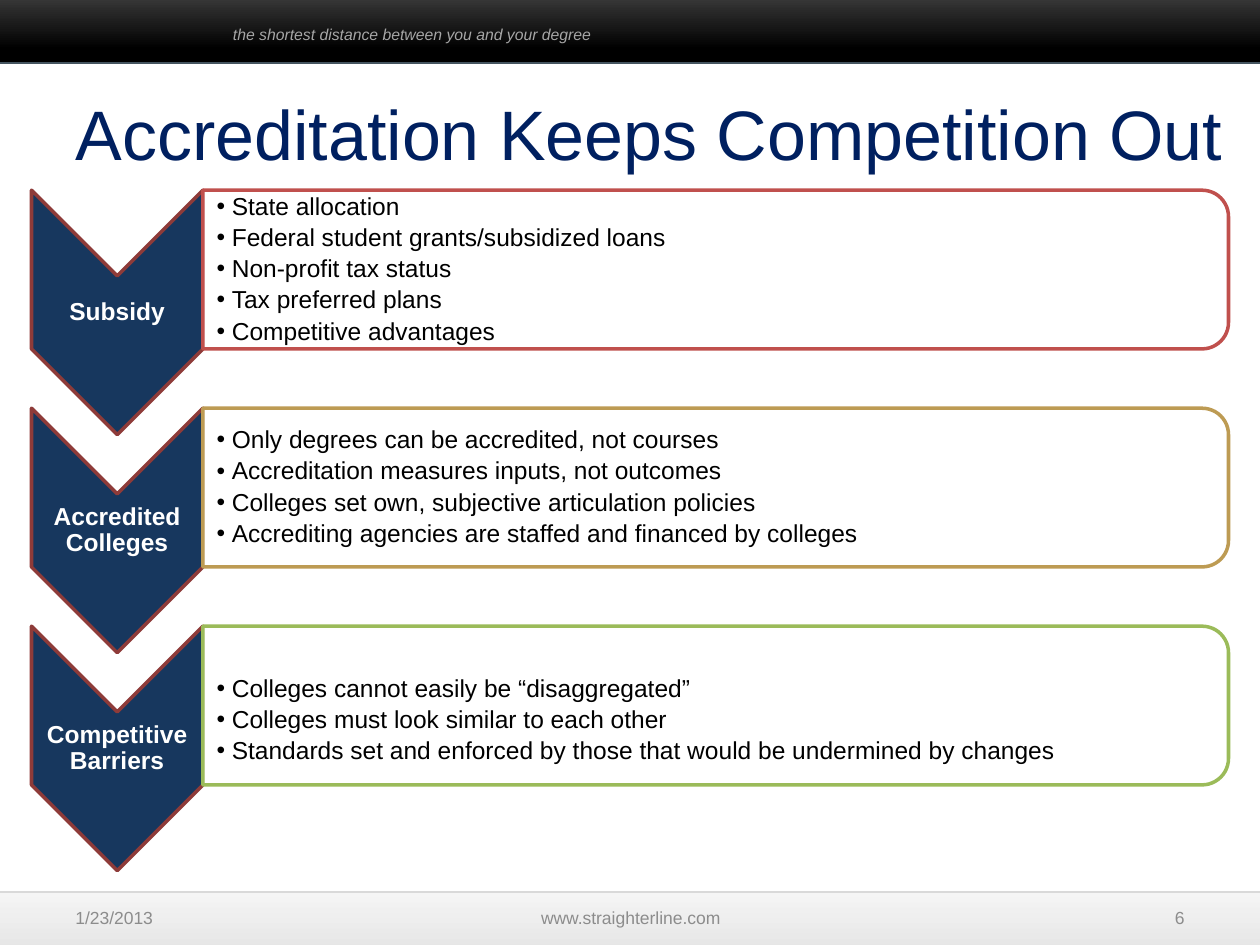
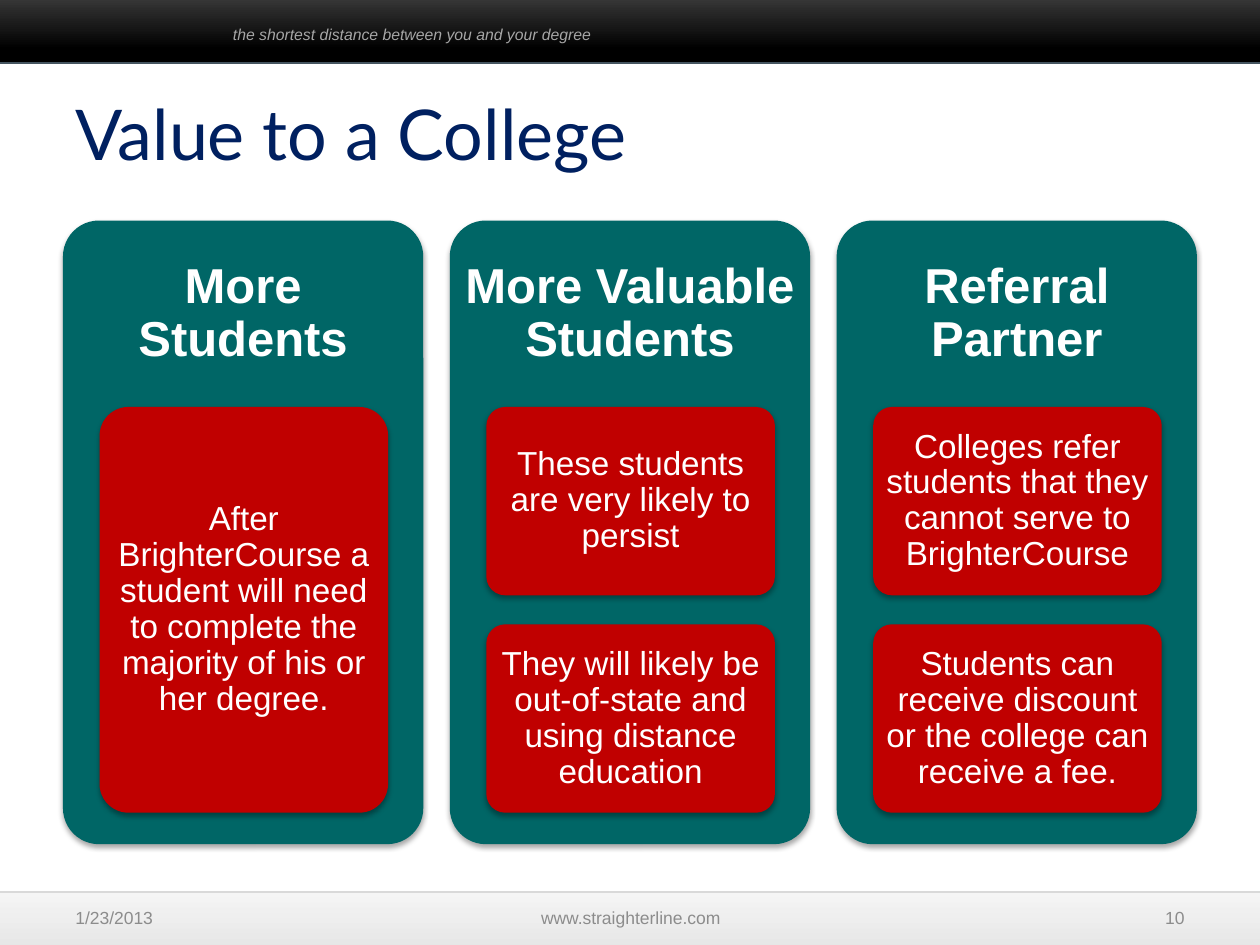
from dataclasses import dataclass
from typing import Any, NamedTuple

from lxml.etree import SubElement
from pptx import Presentation
from pptx.dml.color import RGBColor
from pptx.enum.shapes import MSO_SHAPE as Kind
from pptx.enum.text import MSO_ANCHOR as Anchor, MSO_AUTO_SIZE as Fit, PP_ALIGN as Align
from pptx.oxml.ns import qn
from pptx.util import Inches, Pt


@dataclass(frozen=True)
class Theme:
    font: str = "Arial"
    lato: str = "Lato"
    white: str = "FFFFFF"
    black: str = "000000"
    title: str = "002060"
    foot: str = "8C8C8C"
    motto: str = "A6A6A6"
    edge: str = "455560"
    rule: str = "D9D9D9"
    light: str = "F2F2F2"
    dark: str = "404040"
    navy: str = "17375E"
    rust: str = "8E3B39"
    red: str = "C0504D"
    gold: str = "BD9B53"
    green: str = "9BBB59"
    teal: str = "006666"
    tile: str = "C00000"
    big: float = 40
    head: float = 28
    body: float = 19
    list: float = 14
    small: float = 10
    tiny: float = 9


T = Theme()


class Area(NamedTuple):
    left: float
    top: float
    width: float
    height: float

    def turn(self) -> "Area":
        shift = (self.width - self.height) / 2
        return Area(self.left + shift, self.top - shift, self.height, self.width)


@dataclass(frozen=True)
class Style:
    size: float
    color: str
    font: str = T.font
    bold: bool = False
    italic: bool = False
    align: Align = Align.LEFT
    anchor: Anchor = Anchor.TOP
    inset: tuple = (0.1, 0.05, 0.1, 0.05)
    space: float = 1.0
    after: float = 0
    bullet: bool = False


class Row(NamedTuple):
    label: str
    color: str
    items: list
    push: float = 0.01


class Card(NamedTuple):
    label: str
    tiles: list


MID = {"align": Align.CENTER, "anchor": Anchor.MIDDLE, "space": 0.9}
LABEL = Style(T.list, T.white, bold=True, inset=(0.01,) * 4, **MID)
HEAD = Style(T.head, T.white, bold=True, inset=(0.12,) * 4, **MID)
TILE = Style(T.body, T.white, inset=(0.05, 0.04, 0.05, 0.04), **MID)
MOTTO = Style(T.tiny, T.motto, italic=True)

ROWS = [
    Row("Subsidy", T.red, [
        "State allocation",
        "Federal student grants/subsidized loans",
        "Non-profit tax status",
        "Tax preferred plans",
        "Competitive advantages",
    ]),
    Row("Accredited Colleges", T.gold, [
        "Only degrees can be accredited, not courses",
        "Accreditation measures inputs, not outcomes",
        "Colleges set own, subjective articulation policies",
        "Accrediting agencies are staffed and financed by colleges",
    ]),
    Row("Competitive Barriers", T.green, [
        "Colleges cannot easily be “disaggregated”",
        "Colleges must look similar to each other",
        "Standards set and enforced by those that would be undermined by changes",
    ], 0.25),
]

CARDS = [
    Card("More Students", [
        "After BrighterCourse a student will need to complete the majority of his or her degree.",
    ]),
    Card("More Valuable Students", [
        "These students are very likely to persist",
        "They will likely be out-of-state and using distance education",
    ]),
    Card("Referral Partner", [
        "Colleges refer students that they cannot serve to BrighterCourse",
        "Students can receive discount or the college can receive a fee.",
    ]),
]


def put(target: Any, values: dict) -> None:
    for name, value in values.items():
        setattr(target, name, value)


def tint(color: str) -> RGBColor:
    return RGBColor.from_string(color)


def place(shape: Any, area: Area) -> None:
    put(shape, {key: Inches(val) for key, val in area._asdict().items()})


def write(shape: Any, lines: list, style: Style) -> None:
    frame = shape.text_frame
    sides = ("margin_left", "margin_top", "margin_right", "margin_bottom")
    put(frame, {side: Inches(gap) for side, gap in zip(sides, style.inset)})
    put(frame, {"word_wrap": True, "auto_size": Fit.NONE, "vertical_anchor": style.anchor})
    for spot, line in enumerate(lines):
        para = frame.add_paragraph() if spot else frame.paragraphs[0]
        if style.bullet:
            props = para._p.get_or_add_pPr()
            put_in = Inches(0.12)
            props.set("marL", str(put_in))
            props.set("indent", str(-put_in))
            SubElement(props, qn("a:buFont")).set("typeface", T.font)
            SubElement(props, qn("a:buChar")).set("char", "•")
        put(para, {
            "alignment": style.align,
            "line_spacing": style.space,
            "space_before": Pt(0),
            "space_after": Pt(style.after),
        })
        run = para.add_run()
        run.text = line
        put(run.font, {
            "name": style.font,
            "size": Pt(style.size),
            "bold": style.bold,
            "italic": style.italic,
        })
        run.font.color.rgb = tint(style.color)


def note(slide: Any, area: Area, text: str, style: Style) -> None:
    box = slide.shapes.add_textbox(*map(Inches, area))
    write(box, [text], style)


def draw(slide: Any, kind: Kind, area: Area, stops: list, alpha: int = 100,
         line: str = "", width: float = 2, turned: bool = False) -> Any:
    shape = slide.shapes.add_shape(kind, *map(Inches, area.turn() if turned else area))
    shape.rotation = 90 if turned else 0
    shape.shadow.inherit = False
    fill = shape.fill
    if len(stops) == 1:
        fill.solid()
        fill.fore_color.rgb = tint(stops[0][1])
    else:
        fill.gradient()
        fill.gradient_angle = 270
        for stop, (spot, color) in zip(fill.gradient_stops, stops):
            stop.position = spot
            stop.color.rgb = tint(color)
    if alpha < 100:
        for color in shape.element.spPr.iter(qn("a:srgbClr")):
            SubElement(color, qn("a:alpha")).set("val", str(alpha * 1000))
    if line:
        shape.line.color.rgb = tint(line)
        shape.line.width = Pt(width)
    else:
        shape.line.fill.background()
    return shape


def block(slide: Any, area: Area, color: str) -> Any:
    shape = draw(slide, Kind.ROUNDED_RECTANGLE, area, [(0, color)])
    shape.adjustments[0] = 0.1
    glow = SubElement(shape.element.spPr.find(qn("a:effectLst")), qn("a:outerShdw"))
    form = {"blurRad": Pt(3.1), "dist": Pt(1.8), "dir": 5400000, "rotWithShape": 0}
    for key, val in form.items():
        glow.set(key, str(val))
    shade = SubElement(glow, qn("a:srgbClr"))
    shade.set("val", T.black)
    SubElement(shade, qn("a:alpha")).set("val", "35000")
    return shape


def start(deck: Any, layout: int, title: str, font: str, width: float, page: int) -> Any:
    slide = deck.slides.add_slide(deck.slide_layouts[layout])
    draw(slide, Kind.RECTANGLE, Area(-0.08, 7.08, 10.17, 0.5),
         [(0, T.light), (1, T.rule)], 70, T.rule, 1)
    feet = [
        (0.5, 2.33, "1/23/2013", Align.LEFT),
        (3.42, 3.17, "www.straighterline.com", Align.CENTER),
        (7.17, 2.33, str(page), Align.RIGHT),
    ]
    for left, span, text, align in feet:
        style = Style(T.small, T.foot, align=align, anchor=Anchor.MIDDLE)
        note(slide, Area(left, 7.08, span, 0.4), text, style)
    draw(slide, Kind.RECTANGLE, Area(-0.08, -0.08, 10.17, 0.58),
         [(0, T.dark), (0.81, T.black)], line=T.edge, width=1.5)
    note(slide, Area(1.75, 0.15, 5.25, 0.25),
         "the shortest distance between you and your degree", MOTTO)
    place(slide.shapes.title, Area(0.5, 0.67, width, 1.25))
    write(slide.shapes.title, [title], Style(T.big, T.title, font))
    return slide


def barriers(deck: Any) -> None:
    slide = start(deck, 4, "Accreditation Keeps Competition Out", T.font, 9.42, 6)
    bodies = list(slide.placeholders)[1:]
    for spot, (row, body) in enumerate(zip(ROWS, bodies)):
        top = 1.51 + 1.73 * spot
        draw(slide, Kind.CHEVRON, Area(0.25, top, 1.36, 1.94), [(0, T.navy)],
             line=T.rust, turned=True)
        note(slide, Area(0.25, top + 0.68, 1.36, 0.58), row.label, LABEL)
        draw(slide, Kind.ROUND_2_SAME_RECTANGLE, Area(1.61, top, 8.14, 1.26),
             [(0, T.white)], 90, row.color, turned=True)
        place(body, Area(1.61, top + 0.06, 8.08, 1.14))
        write(body, row.items, Style(
            T.list, T.black, anchor=Anchor.MIDDLE, inset=(0.11, row.push, 0.01, 0.01),
            space=0.9, after=2.7, bullet=True))
        slide.shapes.element.append(body.element)
    for body in bodies[len(ROWS):]:
        body.element.getparent().remove(body.element)


def value(deck: Any) -> None:
    slide = start(deck, 5, "Value to a College", T.lato, 9, 10)
    gap = 0.23
    for spot, card in enumerate(CARDS):
        left = 0.5 + 3.07 * spot
        block(slide, Area(left, 1.75, 2.86, 4.95), T.teal)
        note(slide, Area(left, 1.75, 2.86, 1.48), card.label, HEAD)
        count = len(card.tiles)
        tall = (3.22 - gap * (count - 1)) / count
        for step, text in enumerate(card.tiles):
            area = Area(left + 0.29, 3.23 + step * (tall + gap), 2.29, tall)
            write(block(slide, area, T.tile), [text], TILE)


def main() -> None:
    deck = Presentation()
    put(deck, {"slide_width": Inches(10), "slide_height": Inches(7.5)})
    barriers(deck)
    value(deck)
    deck.save("out.pptx")


if __name__ == "__main__":
    main()
